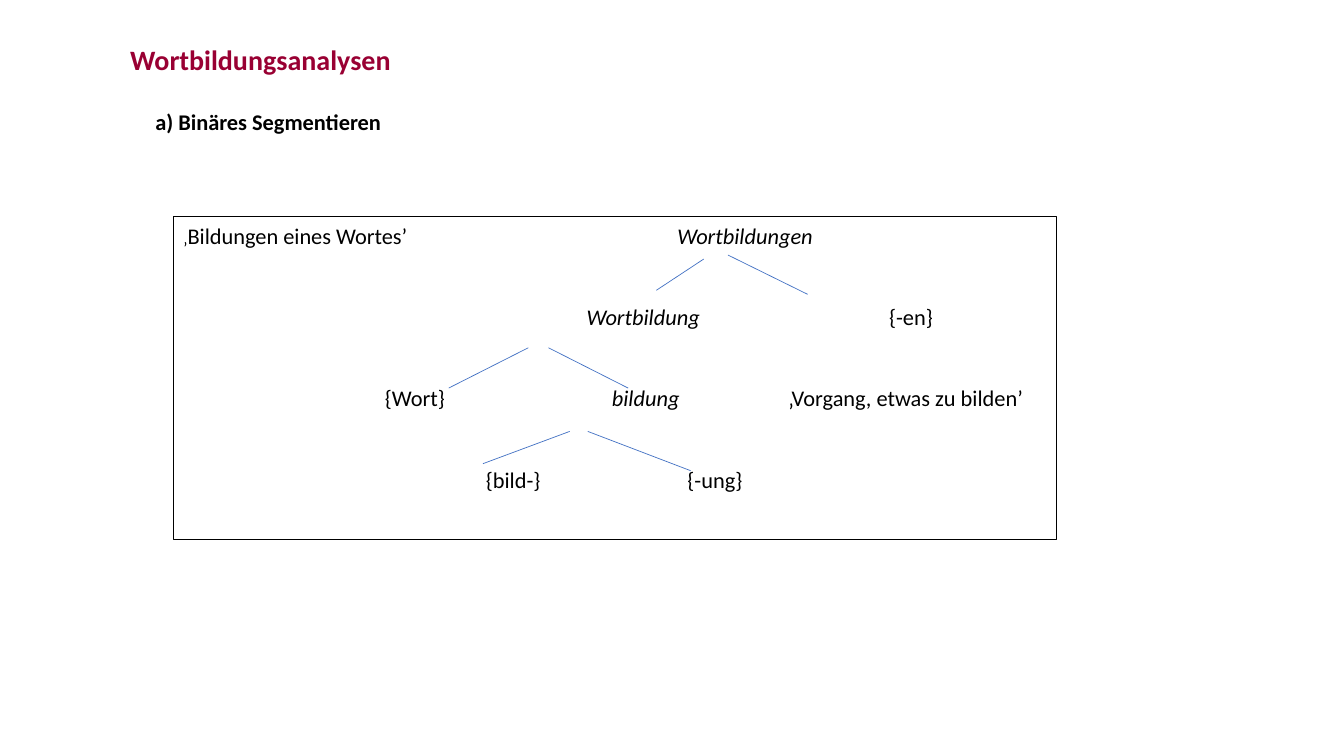
from lxml.etree import SubElement
from pptx import Presentation
from pptx.dml.color import RGBColor
from pptx.enum.shapes import MSO_CONNECTOR, MSO_SHAPE
from pptx.enum.text import MSO_ANCHOR, MSO_AUTO_SIZE, PP_ALIGN
from pptx.oxml.ns import qn
from pptx.util import Inches, Pt

CRIMSON = RGBColor(0x99, 0x00, 0x33)
BLACK = RGBColor(0, 0, 0)
WHITE = RGBColor(0xFF, 0xFF, 0xFF)
BLUE = RGBColor(0x44, 0x72, 0xC4)


def format_font(font, size, color, bold=False, italic=False):
    font.name = "Calibri"
    font.size = Pt(size)
    font.color.rgb = color
    font.bold = bold
    font.italic = italic


presentation = Presentation()
presentation.slide_width = Inches(13.33)
presentation.slide_height = Inches(7.5)
slide = presentation.slides.add_slide(presentation.slide_layouts[5])

# Title with its subheading
title = slide.shapes.title
title.left, title.top = Inches(1.19), Inches(0.41)
title.width, title.height = Inches(9.29), Inches(1.23)
title_frame = title.text_frame
title_frame.text = "Wortbildungsanalysen\na) Binäres Segmentieren"
title_frame.vertical_anchor = MSO_ANCHOR.TOP
title_frame.auto_size = MSO_AUTO_SIZE.NONE
heading, subheading = title_frame.paragraphs
for paragraph, size, color in ((heading, 20, CRIMSON), (subheading, 16, BLACK)):
    paragraph.alignment = PP_ALIGN.LEFT
    paragraph.line_spacing = 0.9
    paragraph.space_before = Pt(0)
    format_font(paragraph.runs[0].font, size, color, bold=True)
subheading.space_before = Pt(25)
subheading_properties = subheading._p.get_or_add_pPr()
subheading_properties.set("marL", str(Inches(0.25)))
subheading_properties.set("indent", "0")

# Framed tree: each level is a paragraph whose words sit at tab stops
box = slide.shapes.add_shape(
    MSO_SHAPE.RECTANGLE, Inches(1.72), Inches(2.15), Inches(8.76), Inches(3.2))
box.shadow.inherit = False
box.fill.solid()
box.fill.fore_color.rgb = WHITE
box.line.color.rgb = BLACK
box.line.width = Pt(0.75)
box_frame = box.text_frame
box_frame.word_wrap = True
box_frame.vertical_anchor = MSO_ANCHOR.TOP

# (tab stop in inches, text, size, italic); None continues without a tab
tree_levels = [
    [(None, "‚", 12, False), (None, "Bildungen eines Wortes’", 16, False),
     (4.9, "Wortbildungen", 16, True)],
    [(4, "Wortbildung", 16, True), (7, "{-en}", 16, False)],
    [(2, "{Wort}", 16, False), (4.25, "bildung", 16, True),
     (6, "‚Vorgang, etwas zu bilden’", 16, False)],
    [(3, "{bild-}", 16, False), (5, "{-ung}", 16, False)],
]
for index, level in enumerate(tree_levels):
    paragraph = box_frame.add_paragraph() if index else box_frame.paragraphs[0]
    paragraph.alignment = PP_ALIGN.LEFT
    paragraph.space_after = Pt(39)
    tab_list = SubElement(paragraph._p.get_or_add_pPr(), qn("a:tabLst"))
    for stop, text, size, italic in level:
        if stop is not None:
            SubElement(tab_list, qn("a:tab"), pos=str(Inches(stop)), algn="l")
            text = "\t" + text
        run = paragraph.add_run()
        run.text = text
        format_font(run.font, size, BLACK, italic=italic)

# Branches
branches = [
    (6.51, 2.88, 6.98, 2.57), (7.22, 2.53, 8.01, 2.92),
    (4.45, 3.85, 5.24, 3.45), (5.44, 3.45, 6.23, 3.85),
    (4.79, 4.6, 5.65, 4.28), (5.83, 4.28, 6.85, 4.67),
]
for ends in branches:
    branch = slide.shapes.add_connector(
        MSO_CONNECTOR.STRAIGHT, *(Inches(value) for value in ends))
    branch.line.color.rgb = BLUE
    branch.line.width = Pt(0.5)
    SubElement(branch._element.spPr, qn("a:effectLst"))

presentation.save("out.pptx")
